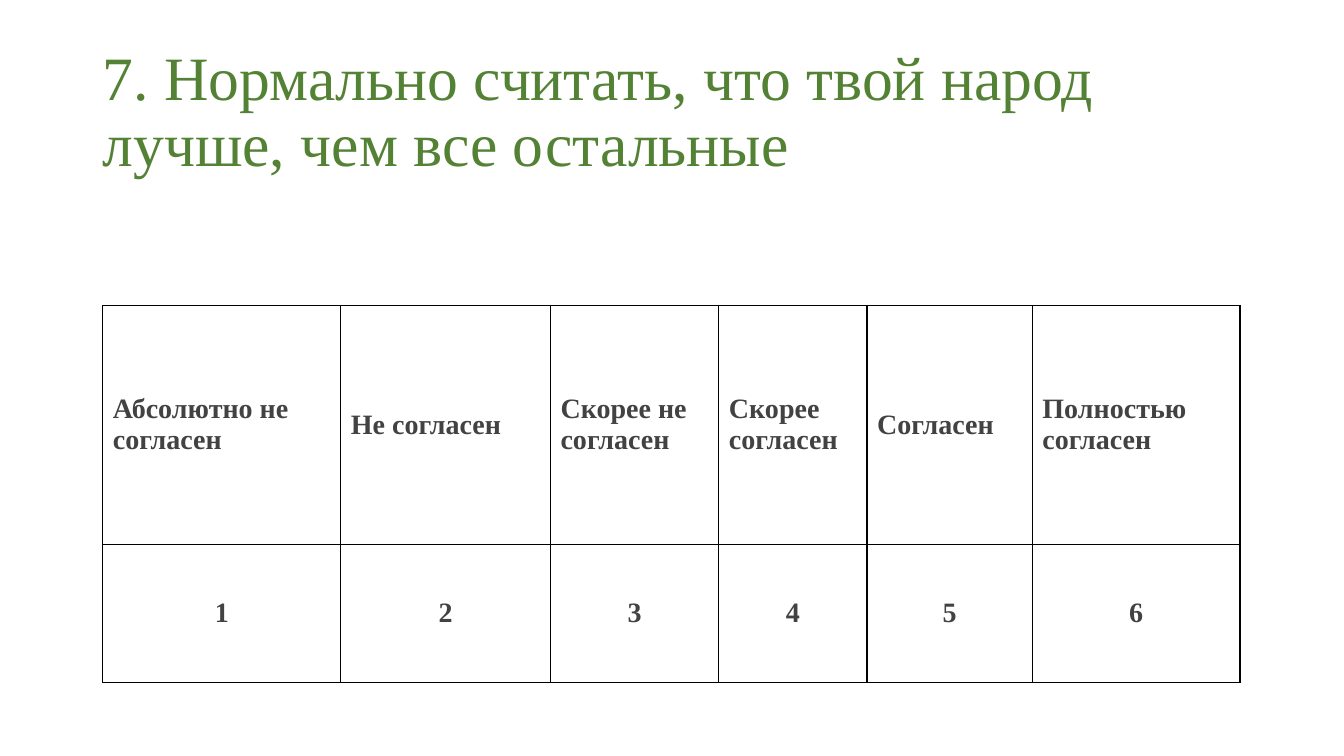
from lxml.etree import SubElement
from pptx import Presentation
from pptx.dml.color import RGBColor
from pptx.enum.text import MSO_ANCHOR as Anchor, PP_ALIGN as Align
from pptx.oxml.ns import qn
from pptx.util import Inches, Pt

GREEN = RGBColor(0x54, 0x82, 0x35)
GREY = RGBColor(0x42, 0x42, 0x42)
BLACK = RGBColor(0x00, 0x00, 0x00)
WHITE = RGBColor(0xFF, 0xFF, 0xFF)

TITLE = "7. Нормально считать, что твой народ лучше, чем все остальные"
ANSWERS = ["Абсолютно не согласен", "Не согласен", "Скорее не согласен",
           "Скорее согласен", "Согласен", "Полностью согласен"]
COLUMN_WIDTHS = [2.36, 2.08, 1.67, 1.47, 1.64, 2.06]
ROW_HEIGHTS = [2.37, 1.37]

TITLE_FONT = {"name": "Times New Roman", "size": Pt(44)}
CELL_FONT = {"name": "Times New Roman", "size": Pt(20), "bold": True}
CELL_FORMAT = {"vertical_anchor": Anchor.MIDDLE,
               "margin_left": Inches(0.1), "margin_right": Inches(0.1),
               "margin_top": Inches(0.01), "margin_bottom": Inches(0.01)}


def apply_format(target, values):
    for name, value in values.items():
        setattr(target, name, value)


def write_text(paragraph, text, font_values, color):
    run = paragraph.add_run()
    run.text = text
    apply_format(run.font, font_values)
    run.font.color.rgb = color


def add_borders(cell, color, width):
    """Draw all four borders; they must come before the cell's fill."""
    properties = cell._tc.get_or_add_tcPr()
    for side in ("a:lnL", "a:lnR", "a:lnT", "a:lnB"):
        line = SubElement(properties, qn(side), w=str(width))
        fill = SubElement(line, qn("a:solidFill"))
        SubElement(fill, qn("a:srgbClr"), val=str(color))


def add_title(slide, left, top, width, height):
    box = slide.shapes.add_textbox(
        Inches(left), Inches(top), Inches(width), Inches(height))
    apply_format(box.text_frame,
                 {"word_wrap": True, "vertical_anchor": Anchor.MIDDLE})
    paragraph = box.text_frame.paragraphs[0]
    paragraph.line_spacing = 0.9
    write_text(paragraph, TITLE, TITLE_FONT, GREEN)


def add_answer_scale(slide, left, top):
    table = slide.shapes.add_table(
        len(ROW_HEIGHTS), len(ANSWERS), Inches(left), Inches(top),
        Inches(sum(COLUMN_WIDTHS)), Inches(sum(ROW_HEIGHTS))).table
    apply_format(table, {"first_row": False, "horz_banding": False})
    for column, width in zip(table.columns, COLUMN_WIDTHS):
        column.width = Inches(width)
    for row, height in zip(table.rows, ROW_HEIGHTS):
        row.height = Inches(height)

    # Answers above, their scores below
    scores = [str(number) for number in range(1, len(ANSWERS) + 1)]
    for row, texts, alignment in zip(
            table.rows, (ANSWERS, scores), (Align.LEFT, Align.CENTER)):
        for cell, text in zip(row.cells, texts):
            apply_format(cell, CELL_FORMAT)
            add_borders(cell, BLACK, Pt(1))
            cell.fill.solid()
            cell.fill.fore_color.rgb = WHITE
            paragraph = cell.text_frame.paragraphs[0]
            paragraph.alignment = alignment
            write_text(paragraph, text, CELL_FONT, GREY)


def main():
    presentation = Presentation()
    presentation.slide_width = Inches(13.33)
    presentation.slide_height = Inches(7.5)
    slide = presentation.slides.add_slide(presentation.slide_layouts[6])
    add_title(slide, 0.92, 0.4, 11.5, 1.45)
    add_answer_scale(slide, 1.02, 3.03)
    presentation.save("out.pptx")


if __name__ == "__main__":
    main()
